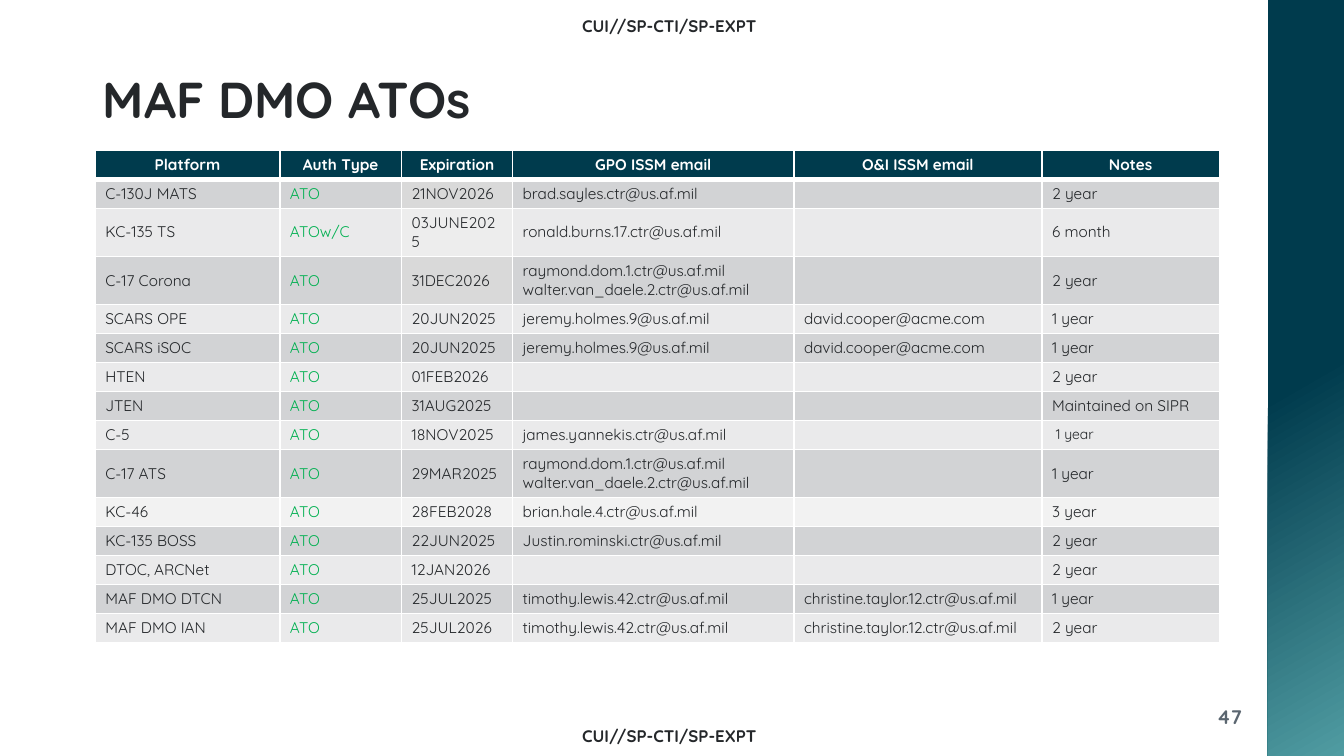
import pptx
import pptx.dml.color
import pptx.enum.shapes
import pptx.enum.text
import pptx.oxml
import pptx.oxml.ns
import pptx.util
from pptx.dml.color import RGBColor
from pptx.enum.text import MSO_ANCHOR, PP_ALIGN
from pptx.util import Cm

FONT = "Quicksand"
WHITE = RGBColor(0xFF, 0xFF, 0xFF)
INK = RGBColor(0x24, 0x27, 0x2A)
SLATE = RGBColor(0x5B, 0x66, 0x70)
NAVY = RGBColor(0x00, 0x3B, 0x4D)
TEAL = RGBColor(0x50, 0x9C, 0xA2)
GREEN = RGBColor(0x00, 0xB0, 0x50)
DARK_BAND = RGBColor(0xD2, 0xD3, 0xD5)
LIGHT_BAND = RGBColor(0xEA, 0xEA, 0xEB)
DATE_DARK = RGBColor(0xD9, 0xD9, 0xD9)
DATE_LIGHT = RGBColor(0xED, 0xED, 0xED)
PALE = RGBColor(0xF2, 0xF2, 0xF2)

MARKING = "CUI//SP-CTI/SP-EXPT"
COLUMN_WIDTHS = [4.65, 3.07, 2.8, 7.09, 6.25, 4.47]
ROW_HEIGHT = 0.73
TALL_ROW_HEIGHT = 1.21
THIN, THICK = 1.29, 3.86
AUTH, DATE, GPO, NOTES = 1, 2, 3, 5

HEADINGS = ["Platform", "Auth Type", "Expiration", "GPO ISSM email",
            "O&I ISSM email", "Notes"]
C17_EMAILS = "raymond.dom.1.ctr@us.af.mil\nwalter.van_daele.2.ctr@us.af.mil"
SCARS_CONTACTS = ["jeremy.holmes.9@us.af.mil", "david.cooper@acme.com"]
DMO_CONTACTS = ["timothy.lewis.42.ctr@us.af.mil",
                "christine.taylor.12.ctr@us.af.mil"]
PLATFORMS = [
    ["C-130J MATS", "ATO", "21NOV2026", "brad.sayles.ctr@us.af.mil", "", "2 year"],
    ["KC-135 TS", "ATOw/C", "03JUNE2025", "ronald.burns.17.ctr@us.af.mil", "", "6 month"],
    ["C-17 Corona", "ATO", "31DEC2026", C17_EMAILS, "", "2 year"],
    ["SCARS OPE", "ATO", "20JUN2025", *SCARS_CONTACTS, "1 year"],
    ["SCARS iSOC", "ATO", "20JUN2025", *SCARS_CONTACTS, "1 year"],
    ["HTEN", "ATO", "01FEB2026", "", "", "2 year"],
    ["JTEN", "ATO", "31AUG2025", "", "", "Maintained on SIPR"],
    ["C-5", "ATO", "18NOV2025", "james.yannekis.ctr@us.af.mil", "", "1 year"],
    ["C-17 ATS", "ATO", "29MAR2025", C17_EMAILS, "", "1 year"],
    ["KC-46", "ATO", "28FEB2028", "brian.hale.4.ctr@us.af.mil", "", "3 year"],
    ["KC-135 BOSS", "ATO", "22JUN2025", "Justin.rominski.ctr@us.af.mil", "", "2 year"],
    ["DTOC, ARCNet", "ATO", "12JAN2026", "", "", "2 year"],
    ["MAF DMO DTCN", "ATO", "25JUL2025", *DMO_CONTACTS, "1 year"],
    ["MAF DMO IAN", "ATO", "25JUL2026", *DMO_CONTACTS, "2 year"],
]
C5_ROW, KC46_ROW = 8, 10


def set_font(para, size, color, bold):
    para.font.name = FONT
    para.font.size = pptx.util.Pt(size)
    para.font.bold = bold
    para.font.color.rgb = color


def add_text(page, text, left, top, width, height, size, color, align,
             anchor=MSO_ANCHOR.TOP, spacing=1.0):
    box = page.shapes.add_textbox(Cm(left), Cm(top), Cm(width), Cm(height))
    frame = box.text_frame
    frame.word_wrap = True
    frame.vertical_anchor = anchor
    para = frame.paragraphs[0]
    para.text = text
    para.alignment = align
    para.line_spacing = spacing
    set_font(para, size, color, True)


def add_side_band(page):
    band = page.shapes.add_shape(pptx.enum.shapes.MSO_SHAPE.RECTANGLE,
                                 Cm(31.95), Cm(0), Cm(1.92), Cm(19.05))
    band.shadow.inherit = False
    band.line.fill.background()
    band.fill.gradient()
    band.fill.gradient_angle = 300
    stops = band.fill.gradient_stops
    for stop, position, color in zip(stops, (0.5, 1.0), (NAVY, TEAL)):
        stop.position = position
        stop.color.rgb = color


def set_borders(cell, top, bottom):
    """Draw white rules on all four sides; widths are in points."""
    properties = cell._tc.get_or_add_tcPr()
    widths = {"lnL": THIN, "lnR": THIN, "lnT": top, "lnB": bottom}
    for position, (side, width) in enumerate(widths.items()):
        line = pptx.oxml.parse_xml(
            f'<a:{side} {pptx.oxml.ns.nsdecls("a")} w="{pptx.util.Pt(width)}">'
            f'<a:solidFill><a:srgbClr val="{WHITE}"/></a:solidFill></a:{side}>')
        properties.insert(position, line)


def fill_cell(cell, text, fill, color, size=11, heading=False):
    cell.fill.solid()
    cell.fill.fore_color.rgb = fill
    cell.vertical_anchor = MSO_ANCHOR.TOP if heading else MSO_ANCHOR.MIDDLE
    cell.text = text
    for para in cell.text_frame.paragraphs:
        para.alignment = PP_ALIGN.CENTER if heading else PP_ALIGN.LEFT
        para.line_spacing = pptx.util.Pt(12 if size == 10 else 13.5)
        set_font(para, size, color, heading)


def band_color(row, column):
    if row == KC46_ROW:
        return PALE
    if column == DATE and row <= 3:
        return DATE_DARK if row % 2 else DATE_LIGHT
    return DARK_BAND if row % 2 else LIGHT_BAND


def add_platform_table(page):
    heights = [ROW_HEIGHT] + [
        TALL_ROW_HEIGHT if "\n" in record[GPO] or len(record[DATE]) > 9 else ROW_HEIGHT
        for record in PLATFORMS]
    table = page.shapes.add_table(
        len(heights), len(COLUMN_WIDTHS), Cm(2.4), Cm(3.79),
        Cm(sum(COLUMN_WIDTHS)), Cm(sum(heights))).table
    table.horz_banding = False
    for column, width in zip(table.columns, COLUMN_WIDTHS):
        column.width = Cm(width)
    for row, height in zip(table.rows, heights):
        row.height = Cm(height)

    # Heading row
    for column, heading in enumerate(HEADINGS):
        cell = table.cell(0, column)
        fill_cell(cell, heading, NAVY, WHITE, heading=True)
        set_borders(cell, THIN, THICK)

    # Platform rows
    for row, record in enumerate(PLATFORMS, start=1):
        for column, text in enumerate(record):
            cell = table.cell(row, column)
            small = row == C5_ROW and column == NOTES
            fill_cell(cell, text, band_color(row, column),
                      GREEN if column == AUTH else INK, 10 if small else 11)
            if small:
                cell.margin_left = Cm(0.35)
            set_borders(cell, THICK if row == 1 else THIN, THIN)


def main():
    deck = pptx.Presentation()
    deck.slide_width, deck.slide_height = Cm(33.87), Cm(19.05)
    page = deck.slides.add_slide(deck.slide_layouts[6])

    # Markings, side band and page number
    for top in (0.28, 18.16):
        add_text(page, MARKING, 5.02, top, 23.7, 0.61, 12, INK, PP_ALIGN.CENTER)
    add_side_band(page)
    add_text(page, "47", 29.21, 17.65, 2.34, 1.02, 14, SLATE, PP_ALIGN.RIGHT)

    # Title and table
    add_text(page, "MAF DMO ATOs", 2.34, 0.94, 29.21, 2.44, 36, INK,
             PP_ALIGN.LEFT, MSO_ANCHOR.BOTTOM, 0.9)
    add_platform_table(page)

    deck.save("out.pptx")


if __name__ == "__main__":
    main()
